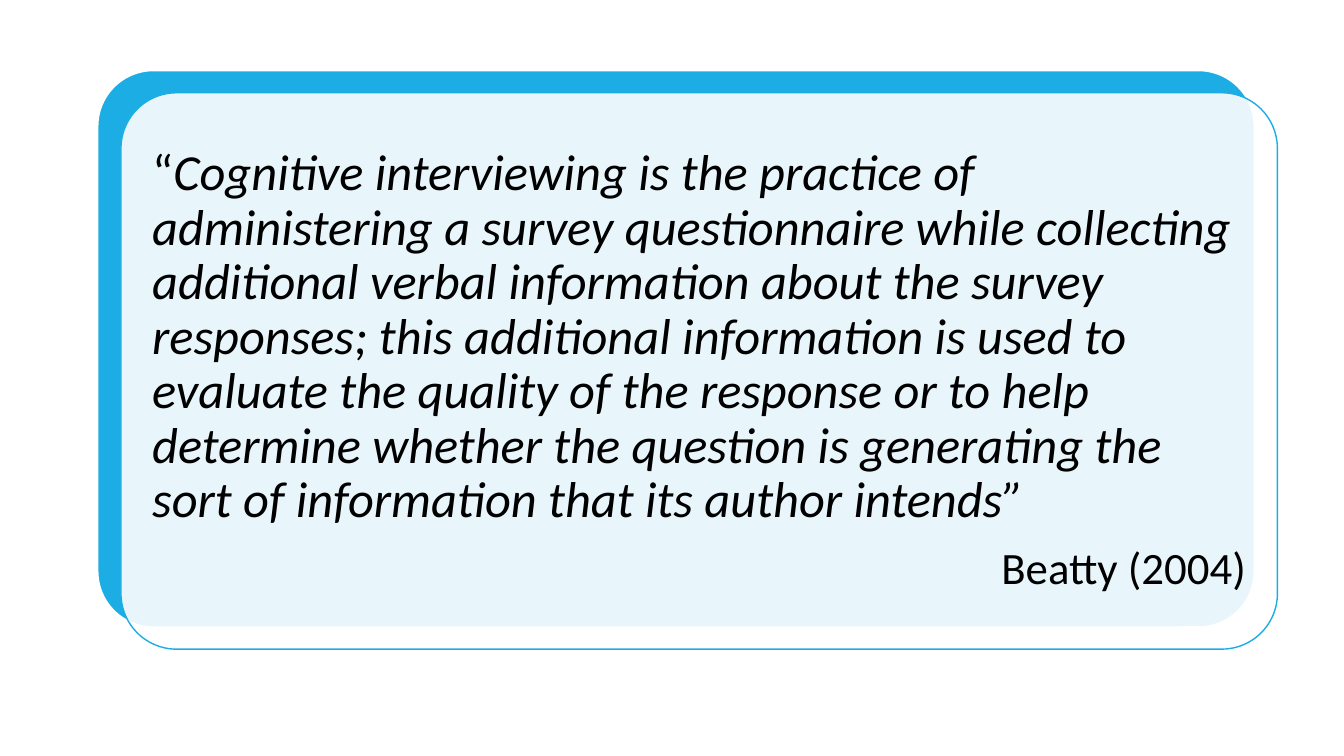
from lxml import etree
from pptx import Presentation
from pptx.dml.color import RGBColor
from pptx.enum import shapes, text
from pptx.oxml import ns
from pptx.util import Inches, Pt

BLUE = RGBColor(0x1C, 0xAD, 0xE4)
WHITE = RGBColor(0xFF, 0xFF, 0xFF)
BLACK = RGBColor(0, 0, 0)

QUOTE = (
    "Cognitive interviewing is the practice of administering a survey "
    "questionnaire while collecting additional verbal information about the "
    "survey responses; this additional information is used to evaluate the "
    "quality of the response or to help determine whether the question is "
    "generating the sort of information that its author intends”"
)

prs = Presentation()
prs.slide_width, prs.slide_height = Inches(13.33), Inches(7.5)
slide = prs.slides.add_slide(prs.slide_layouts[6])

# Blue backing panel and the translucent card offset over it
for left, top, fill, outline in [(0.97, 0.7, BLUE, WHITE), (1.2, 0.92, WHITE, BLUE)]:
    card = slide.shapes.add_shape(
        shapes.MSO_SHAPE.ROUNDED_RECTANGLE,
        Inches(left), Inches(top), Inches(11.47), Inches(5.52))
    card.adjustments[0] = 0.1
    card.shadow.inherit = False
    card.fill.solid()
    card.fill.fore_color.rgb = fill
    card.line.color.rgb = outline
    card.line.width = Pt(1)

# The front card lets a tenth of the blue through
front_colour = card.fill._xPr.find(ns.qn("a:solidFill"))[0]
etree.SubElement(front_colour, ns.qn("a:alpha"), val="90000")

# Quotation and its source
quotation = slide.shapes.add_textbox(
    Inches(1.36), Inches(1.08), Inches(11.15), Inches(5.2)).text_frame
quotation.word_wrap = True
quotation.vertical_anchor = text.MSO_ANCHOR.MIDDLE
quotation.margin_left = quotation.margin_right = Inches(0.15)
quotation.margin_top = quotation.margin_bottom = Inches(0.15)

statement = quotation.paragraphs[0]
source = quotation.add_paragraph()
source.alignment = text.PP_ALIGN.RIGHT

for paragraph, words, size, italic in [
    (statement, "“", 36, False),
    (statement, QUOTE, 36, True),
    (source, "Beatty (2004)", 32, False),
]:
    paragraph.line_spacing = 0.9
    paragraph.space_after = Pt(0.35 * size)
    run = paragraph.add_run()
    run.text = words
    run.font.name = "Calibri"
    run.font.size = Pt(size)
    run.font.italic = italic
    run.font.color.rgb = BLACK

prs.save("out.pptx")
